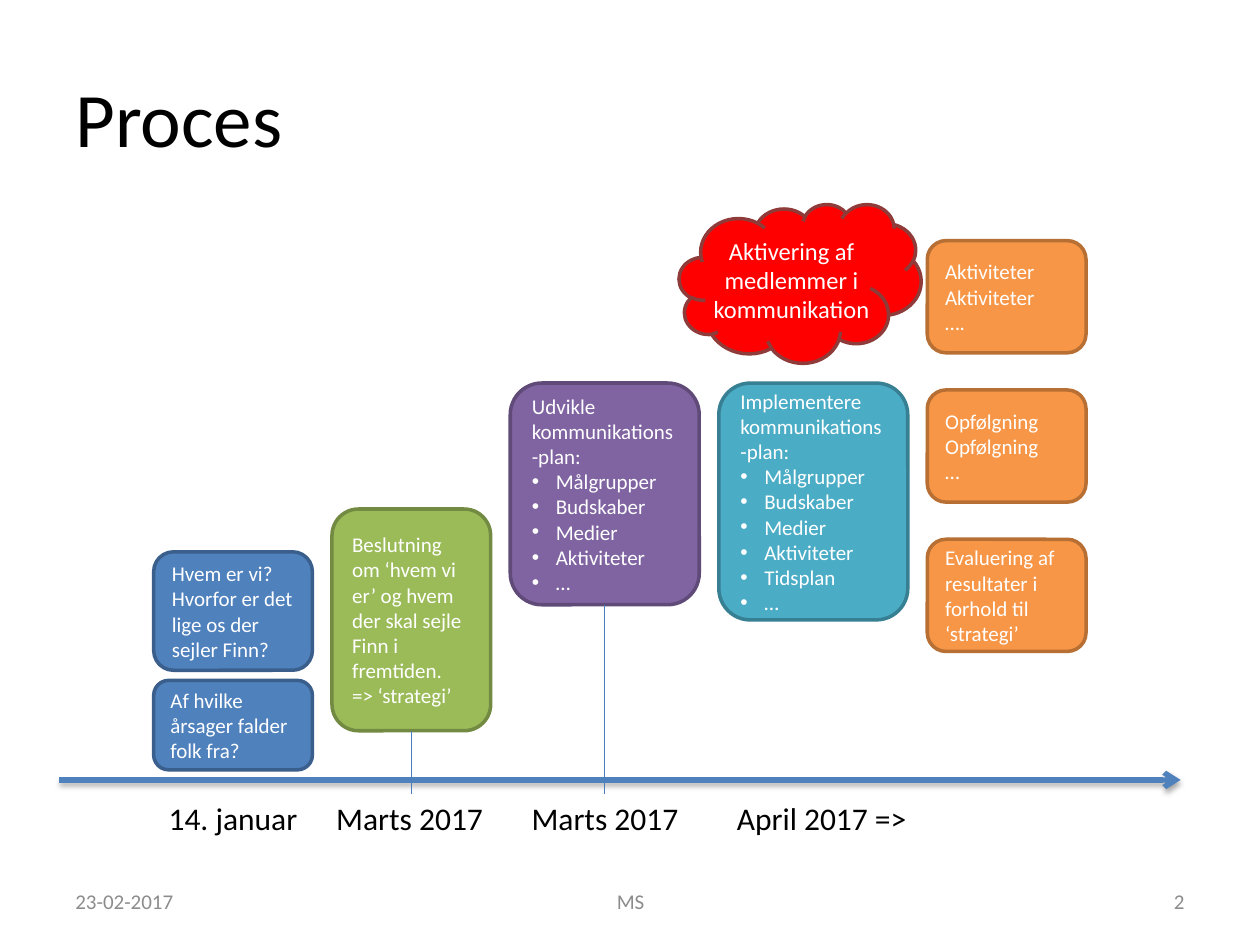
from collections import namedtuple

from lxml.etree import SubElement
from pptx import Presentation
from pptx.dml.color import RGBColor
from pptx.enum.shapes import MSO_CONNECTOR as Connector, MSO_SHAPE as Shape
from pptx.enum.text import MSO_ANCHOR as Anchor, MSO_AUTO_SIZE as AutoSize, PP_ALIGN as Align
from pptx.oxml.ns import qn
from pptx.util import Inches, Pt

Box = namedtuple("Box", "left top width height")
Card = namedtuple("Card", "top height fill line lines bullets", defaults=[()])

COLUMN = Inches(10) // 100
ROW = Inches(7.5) // 75
GAP = 1.55
BLUE, ORANGE = ("4F81BD", "3A5F8C"), ("F79646", "B76F34")
PLAN = ["Målgrupper", "Budskaber", "Medier", "Aktiviteter"]

STEPS = [
    (12.6, [
        Card(24.7, 9.4, *BLUE, ["Hvem er vi?", "Hvorfor er det lige os der sejler Finn?"]),
        Card(34.9, 7.1, *BLUE, ["Af hvilke årsager falder folk fra?"]),
    ]),
    (12.6, [
        Card(21.3, 17.6, "9BBB59", "738A42",
             ["Beslutning om ‘hvem vi er’ og hvem der skal sejle Finn i fremtiden.", "=> ‘strategi’"]),
    ]),
    (15, [
        Card(11.3, 17.6, "8064A2", "5F4A78", ["Udvikle kommunikations-plan:"], PLAN + ["…"]),
    ]),
    (15, [
        Card(11.3, 18.8, "4BACC6", "377F92", ["Implementere kommunikations-plan:"],
             PLAN + ["Tidsplan", "…"]),
    ]),
    (12.6, [
        Card(row * 11.85, 8.9, *ORANGE, lines)
        for row, lines in enumerate([
            ["Aktiviteter", "Aktiviteter", "…."],
            ["Opfølgning", "Opfølgning", "…"],
            ["Evaluering af resultater i forhold til ‘strategi’"],
        ])
    ]),
]


def colour(value):
    return RGBColor.from_string(value)


def to_emu(box):
    return (round(box.left * COLUMN), round(box.top * ROW),
            round(box.width * COLUMN), round(box.height * ROW))


def add_bullet(paragraph):
    properties = paragraph._p.get_or_add_pPr()
    properties.set("marL", str(Inches(0.19)))
    properties.set("indent", str(-Inches(0.19)))
    SubElement(properties, qn("a:buFont")).set("typeface", "Arial")
    SubElement(properties, qn("a:buChar")).set("char", "•")


def write(shape, lines, size, font_colour, align=Align.LEFT, bullets=(), anchor=Anchor.MIDDLE):
    frame = shape.text_frame
    frame.word_wrap = True
    frame.vertical_anchor = anchor
    frame.text = "\n".join([*lines, *bullets])
    for index, paragraph in enumerate(frame.paragraphs):
        paragraph.alignment = align
        if index >= len(lines):
            add_bullet(paragraph)
        paragraph.font.name = "Calibri"
        paragraph.font.size = Pt(size)
        paragraph.font.color.rgb = colour(font_colour)


def add_text(slide, box, text, size, font_colour="000000", **options):
    shape = slide.shapes.add_textbox(*to_emu(box))
    write(shape, [text], size, font_colour, **options)
    return shape


def add_filled(slide, kind, box, fill, line):
    shape = slide.shapes.add_shape(kind, *to_emu(box))
    shape.shadow.inherit = False
    shape.fill.solid()
    shape.fill.fore_color.rgb = colour(fill)
    shape.line.color.rgb = colour(line)
    shape.line.width = Pt(2)
    return shape


def add_line(slide, left, top, right, bottom, line, width):
    connector = slide.shapes.add_connector(
        Connector.STRAIGHT, round(left * COLUMN), round(top * ROW),
        round(right * COLUMN), round(bottom * ROW))
    connector.line.color.rgb = colour(line)
    connector.line.width = Pt(width)
    effects = SubElement(connector._element.spPr, qn("a:effectLst"))
    return connector, effects


def draw_steps(slide, box):
    left = box.left
    bottom_cards = []
    for width, cards in STEPS:
        for card in cards:
            card_box = Box(left, box.top + card.top, width, card.height)
            shape = add_filled(slide, Shape.ROUNDED_RECTANGLE, card_box, card.fill, card.line)
            write(shape, card.lines, 12, "FFFFFF", bullets=card.bullets)
        bottom_cards.append(shape)
        left += width + GAP
    return bottom_cards


def draw_axis(slide, box):
    axis, effects = add_line(slide, box.left, box.top, box.left + box.width, box.top, "4F81BD", 3)
    SubElement(axis.line._get_or_add_ln(), qn("a:tailEnd")).set("type", "arrow")
    shadow = SubElement(effects, qn("a:outerShdw"), blurRad=str(Pt(3.1)), dist=str(Pt(1.8)),
                        dir="5400000", rotWithShape="0")
    black = SubElement(shadow, qn("a:srgbClr"), val="000000")
    SubElement(black, qn("a:alpha"), val="35000")


def draw_timeline(slide, box, milestone_cards):
    draw_axis(slide, box)
    for card in milestone_cards:
        centre = (card.left + card.width / 2) / COLUMN
        tick, _ = add_line(slide, centre, box.top, centre, box.top + 1.1, "4B7EBC", 0.75)
        tick.begin_connect(card, 2)
    labels = [(7.7, 12.3, "14. januar"), (21, 13.8, "Marts 2017"),
              (36.5, 13.8, "Marts 2017"), (52.8, 15.6, "April 2017 =>")]
    for offset, width, text in labels:
        label_box = Box(box.left + offset, box.top + 1, width, 4)
        label = add_text(slide, label_box, text, 18, anchor=Anchor.TOP)
        label.text_frame.word_wrap = False
        label.text_frame.auto_size = AutoSize.SHAPE_TO_FIT_TEXT


def draw_cloud(slide, box):
    cloud = add_filled(slide, Shape.CLOUD, box, "FF0000", "8E3B39")
    write(cloud, ["Aktivering af medlemmer i kommunikation"], 14, "FFFFFF", Align.CENTER)
    cloud.text_frame.margin_left = cloud.text_frame.margin_right = 0


def draw_footer(slide, box):
    parts = [(0, 23.3, "23-02-2017", Align.LEFT), (29.2, 31.7, "MS", Align.CENTER),
             (66.7, 23.3, "2", Align.RIGHT)]
    for offset, width, text, align in parts:
        part_box = Box(box.left + offset, box.top, width, box.height)
        add_text(slide, part_box, text, 12, "8C8C8C", align=align)


def main():
    presentation = Presentation()
    presentation.slide_width = COLUMN * 100
    presentation.slide_height = ROW * 75
    slide = presentation.slides.add_slide(presentation.slide_layouts[6])
    add_text(slide, Box(5, 3, 90, 12.5), "Proces", 44)
    cards = draw_steps(slide, Box(12.2, 19.1, 74, 42))
    draw_timeline(slide, Box(4.7, 61.9, 89, 5), cards[1:3])
    draw_cloud(slide, Box(53.9, 16.2, 19.2, 12.6))
    draw_footer(slide, Box(5, 69.5, 90, 4))
    presentation.save("out.pptx")


if __name__ == "__main__":
    main()
